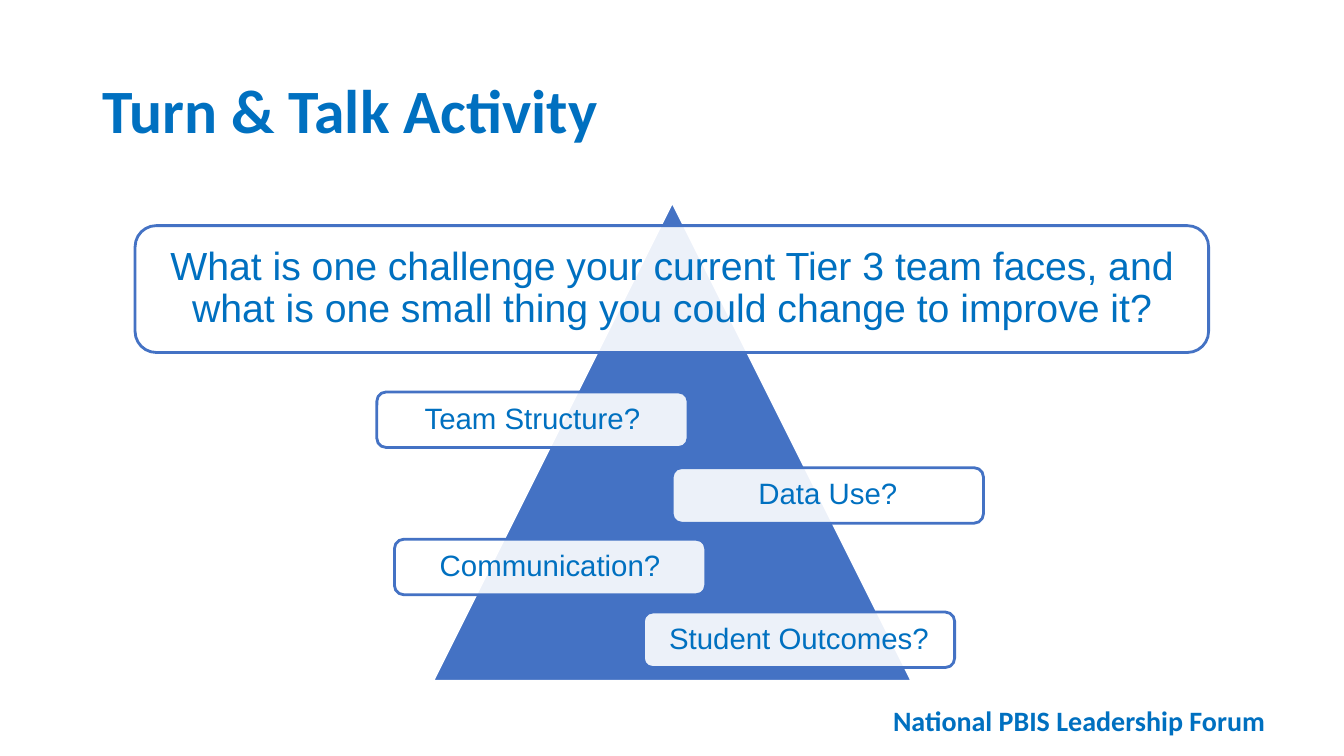
"""Build the Turn & Talk Activity slide."""
from dataclasses import dataclass

from lxml.etree import SubElement
from pptx import Presentation
from pptx.dml.color import RGBColor as RGB
from pptx.enum.shapes import MSO_SHAPE as Shape
from pptx.enum.text import MSO_ANCHOR as Anchor, PP_ALIGN as Align
from pptx.oxml.ns import qn
from pptx.util import Pt


@dataclass(frozen=True)
class Theme:
    """Colours, fonts and type sizes."""
    ink: RGB = RGB(0x00, 0x70, 0xC0)
    blue: RGB = RGB(0x44, 0x72, 0xC4)
    white: RGB = RGB(0xFF, 0xFF, 0xFF)
    head: str = "Calibri"
    body: str = "Arial"
    title: int = 44
    prompt: int = 28
    topic: int = 21
    footer: int = 20
    line: int = 2
    alpha: int = 90


class Deck:
    """Draw elements on one slide in one style."""

    def __init__(self, theme, width, height):
        """Open a blank slide of the given size."""
        self.theme = theme
        self.file = Presentation()
        self.file.slide_width, self.file.slide_height = Pt(width), Pt(height)
        self.slide = self.file.slides.add_slide(self.file.slide_layouts[6])

    def words(self, frame, text, font, size, bold=False, align=Align.CENTER, space=0.9):
        """Fill a text frame with one styled paragraph."""
        frame.word_wrap = True
        para = frame.paragraphs[0]
        para.text, para.alignment, para.line_spacing = text, align, space
        para.font.name, para.font.size, para.font.bold = font, Pt(size), bold
        para.font.color.rgb = self.theme.ink

    def label(self, box, text, size, anchor=Anchor.TOP, **style):
        """Add a bold heading text box."""
        frame = self.slide.shapes.add_textbox(*map(Pt, box)).text_frame
        frame.vertical_anchor = anchor
        self.words(frame, text, self.theme.head, size, True, **style)

    def shape(self, kind, box, fill, line):
        """Add a filled and outlined preset shape."""
        item = self.slide.shapes.add_shape(kind, *map(Pt, box))
        item.shadow.inherit = False
        item.fill.solid()
        item.fill.fore_color.rgb = fill
        item.line.color.rgb = line
        item.line.width = Pt(self.theme.line)
        return item

    def card(self, box, text, size, inset):
        """Add a translucent rounded card with centred text."""
        theme = self.theme
        item = self.shape(Shape.ROUNDED_RECTANGLE, box, theme.white, theme.blue)
        tint = item._element.spPr.find(qn("a:solidFill"))[0]
        SubElement(tint, qn("a:alpha"), val=str(theme.alpha * 1000))
        frame = item.text_frame
        frame.vertical_anchor = Anchor.MIDDLE
        frame.margin_left = frame.margin_right = Pt(inset)
        frame.margin_top = frame.margin_bottom = Pt(inset)
        self.words(frame, text, theme.body, size)


def main():
    """Compose and save the slide."""
    theme = Theme()
    deck = Deck(theme, 960, 540)
    deck.label((603.4, 499, 334.8, 31.7), "National PBIS Leadership Forum",
               theme.footer, space=1.0)
    deck.label((66, 28.8, 828, 104.4), "Turn & Talk Activity", theme.title,
               Anchor.MIDDLE, align=Align.LEFT)
    deck.shape(Shape.ISOSCELES_TRIANGLE, (308.9, 144, 342.7, 342.7),
               theme.blue, theme.white)
    deck.card((96.5, 161.2, 766.8, 90.6),
              "What is one challenge your current Tier 3 team faces, and "
              "what is one small thing you could change to improve it?",
              theme.prompt, 8.6)
    topics = (
        (269.2, 280, "Team Structure?"),
        (480.2, 334.1, "Data Use?"),
        (281.8, 385.2, "Communication?"),
        (459.6, 437.2, "Student Outcomes?"),
    )
    for left, top, text in topics:
        deck.card((left, top, 222.3, 39.6), text, theme.topic, 6.5)
    deck.file.save("out.pptx")


if __name__ == "__main__":
    main()
